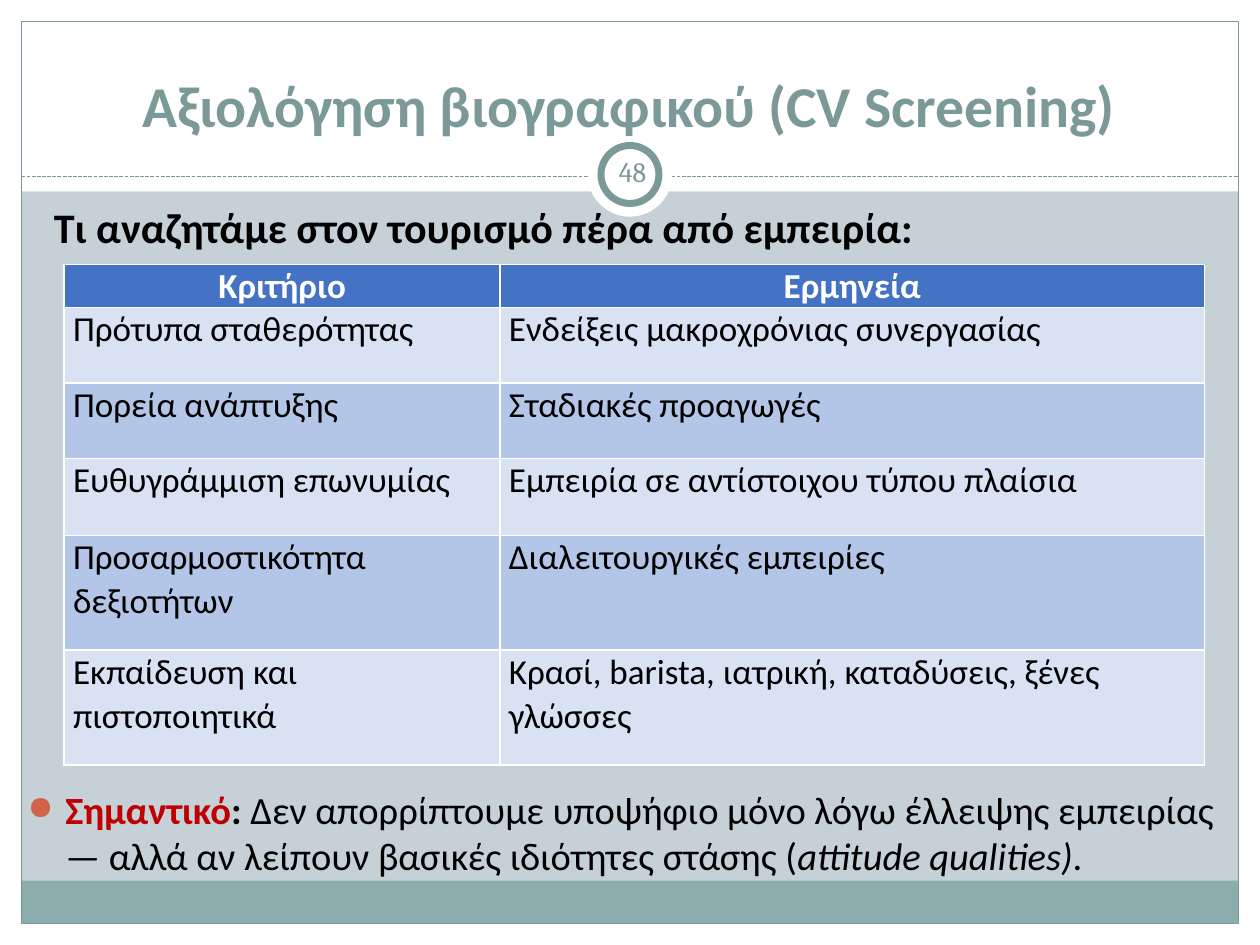
"""Build a slide on CV screening with a table of criteria."""
from lxml import etree
from pptx import Presentation
from pptx.dml.color import RGBColor
from pptx.enum.dml import MSO_LINE
from pptx.enum.shapes import MSO_CONNECTOR, MSO_SHAPE
from pptx.enum.text import MSO_ANCHOR, PP_ALIGN
from pptx.oxml.ns import qn
from pptx.util import Inches, Pt

RECT, OVAL = MSO_SHAPE.RECTANGLE, MSO_SHAPE.OVAL
LINE, DASH = MSO_CONNECTOR.STRAIGHT, MSO_LINE.SQUARE_DOT
LEFT, MID = PP_ALIGN.LEFT, PP_ALIGN.CENTER
TOP, CORE, LOW = MSO_ANCHOR.TOP, MSO_ANCHOR.MIDDLE, MSO_ANCHOR.BOTTOM

WHITE = RGBColor(0xFF, 0xFF, 0xFF)
BLACK = RGBColor(0x00, 0x00, 0x00)
RED = RGBColor(0xC0, 0x00, 0x00)
RUST = RGBColor(0xD1, 0x63, 0x49)
MIST = RGBColor(0xC5, 0xD1, 0xD7)
TEAL = RGBColor(0x8C, 0xAD, 0xAE)
SAGE = RGBColor(0x7C, 0x99, 0x9A)
BLUE = RGBColor(0x44, 0x72, 0xC4)
PALE = RGBColor(0xD9, 0xE2, 0xF3)
SOFT = RGBColor(0xB4, 0xC6, 0xE7)

COLS, ROWS = 100, 75
EDGE = 1.7
WIDE, TALL = COLS - 2 * EDGE, ROWS - 2 * EDGE
HUB_X, HUB_Y = COLS / 2, 13.85

DATA = [
    ("Κριτήριο", "Ερμηνεία"),
    ("Πρότυπα σταθερότητας", "Ενδείξεις μακροχρόνιας συνεργασίας"),
    ("Πορεία ανάπτυξης", "Σταδιακές προαγωγές"),
    ("Ευθυγράμμιση επωνυμίας", "Εμπειρία σε αντίστοιχου τύπου πλαίσια"),
    ("Προσαρμοστικότητα δεξιοτήτων", "Διαλειτουργικές εμπειρίες"),
    ("Εκπαίδευση και πιστοποιητικά",
     "Κρασί, barista, ιατρική, καταδύσεις, ξένες γλώσσες"),
]
WIDTHS = (34.6, 55.9)
HEIGHTS = (3, 6, 6, 6.1, 9.1, 9.1)
NOTE = [
    ("Σημαντικό", {"color": RED, "bold": True}),
    (": ", {"bold": True}),
    ("Δεν απορρίπτουμε υποψήφιο μόνο λόγω έλλειψης εμπειρίας "
     "— αλλά αν λείπουν βασικές ιδιότητες στάσης (", {}),
    ("attitude qualities)", {"italic": True}),
    (".", {}),
]


def grid(*cells):
    """Turn grid counts into lengths."""
    return [Inches(n * 10 / COLS) for n in cells]


def shape(slide, kind, box, fill=None, line=None, width=0.75):
    """Add a flat preset shape."""
    item = slide.shapes.add_shape(kind, *grid(*box))
    item.shadow.inherit = False
    if fill is None:
        item.fill.background()
    else:
        item.fill.solid()
        item.fill.fore_color.rgb = fill
    if line is None:
        item.line.fill.background()
    else:
        item.line.color.rgb = line
        item.line.width = Pt(width)


def disc(slide, size, **look):
    """Add a circle around the hub."""
    box = (HUB_X - size / 2, HUB_Y - size / 2, size, size)
    shape(slide, OVAL, box, WHITE, **look)


def rule(slide, row):
    """Add a dashed line across the frame."""
    item = slide.shapes.add_connector(LINE, *grid(EDGE, row, EDGE + WIDE, row))
    item.line.color.rgb = SAGE
    item.line.width = Pt(0.75)
    item.line.dash_style = DASH
    etree.SubElement(item.element.spPr, qn("a:effectLst"))


def write(para, text, size=20, color=BLACK, bold=False, italic=False,
          face="Calibri", align=LEFT):
    """Add a run of text to a paragraph."""
    para.alignment = align
    run = para.add_run()
    run.text = text
    font = run.font
    font.name, font.size = face, Pt(size)
    font.bold, font.italic = bold, italic
    font.color.rgb = color


def area(slide, box, anchor=TOP, inset=None, before=0):
    """Add a wrapped text box and return its paragraph."""
    frame = slide.shapes.add_textbox(*grid(*box)).text_frame
    frame.word_wrap = True
    frame.vertical_anchor = anchor
    if inset is not None:
        frame.margin_left, frame.margin_right = grid(inset, inset)
        frame.margin_top, frame.margin_bottom = grid(inset, inset)
    para = frame.paragraphs[0]
    para.space_before = Pt(before)
    return para


def bullet(para, indent):
    """Give a paragraph a round hanging bullet."""
    props = para._p.get_or_add_pPr()
    (hang,) = grid(indent)
    props.set("marL", str(hang))
    props.set("indent", str(-hang))
    tint = etree.SubElement(props, qn("a:buClr"))
    etree.SubElement(tint, qn("a:srgbClr"), val=str(RUST))
    etree.SubElement(props, qn("a:buSzPct"), val="85000")
    etree.SubElement(props, qn("a:buChar"), char="●")


def border(cell):
    """Draw white lines on all sides of a cell."""
    props = cell._tc.get_or_add_tcPr()
    for side in ("lnL", "lnR", "lnT", "lnB"):
        line = etree.SubElement(props, qn(f"a:{side}"), w=str(Pt(1)))
        fill = etree.SubElement(line, qn("a:solidFill"))
        etree.SubElement(fill, qn("a:srgbClr"), val=str(WHITE))


def fill_cell(cell, text, fill, **look):
    """Set the text, fill and borders of a cell."""
    border(cell)
    cell.fill.solid()
    cell.fill.fore_color.rgb = fill
    cell.margin_left, cell.margin_right = grid(0.7, 0.7)
    cell.margin_top = cell.margin_bottom = 0
    para = cell.text_frame.paragraphs[0]
    para.line_spacing = 1.02
    write(para, text, **look)


def table(slide, left, top):
    """Add the table of criteria."""
    box = grid(left, top, sum(WIDTHS), sum(HEIGHTS))
    grid_table = slide.shapes.add_table(len(DATA), len(WIDTHS), *box).table
    for col, width in zip(grid_table.columns, grid(*WIDTHS)):
        col.width = width
    for row, height in zip(grid_table.rows, grid(*HEIGHTS)):
        row.height = height
    head = {"color": WHITE, "bold": True, "align": MID}
    for i, texts in enumerate(DATA):
        fill = (PALE if i % 2 else SOFT) if i else BLUE
        for j, text in enumerate(texts):
            fill_cell(grid_table.cell(i, j), text, fill, **({} if i else head))


def decor(slide):
    """Add the margins, frame, band and number ring."""
    slide.background.fill.solid()
    slide.background.fill.fore_color.rgb = MIST
    for box in ((0, ROWS - EDGE, COLS, EDGE), (0, 0, COLS, 15.2),
                (0, 0, EDGE, ROWS), (COLS - EDGE, 0, EDGE, ROWS)):
        shape(slide, RECT, box, WHITE)
    shape(slide, RECT, (EDGE, 69.9, WIDE, 3.4), TEAL)
    shape(slide, RECT, (EDGE, EDGE, WIDE, TALL), line=SAGE)
    rule(slide, 14)
    disc(slide, 6.7)
    disc(slide, 4.6, line=SAGE, width=4)


def main():
    """Build and save the slide."""
    deck = Presentation()
    deck.slide_width, deck.slide_height = grid(COLS, ROWS)
    slide = deck.slides.add_slide(deck.slide_layouts[6])
    decor(slide)
    write(area(slide, (3.3, 3.6, 93.3, 7.9), LOW),
          "Αξιολόγηση βιογραφικού (CV Screening)",
          size=33, color=SAGE, bold=True, align=MID)
    write(area(slide, (3.3, 15.5, 93, 5.1), before=4.8),
          "Τι αναζητάμε στον τουρισμό πέρα από εμπειρία:", size=24, bold=True)
    write(area(slide, (47.7, 11.2, 5, 4.8), CORE, 0.5), "48",
          size=16, color=SAGE, face="Cambria", align=MID)
    table(slide, 5.1, 21)
    note = area(slide, (1.2, 61.9, 96.8, 10.6), before=4.4)
    bullet(note, 3)
    for text, look in NOTE:
        write(note, text, size=22, **look)
    deck.save("out.pptx")


if __name__ == "__main__":
    main()
